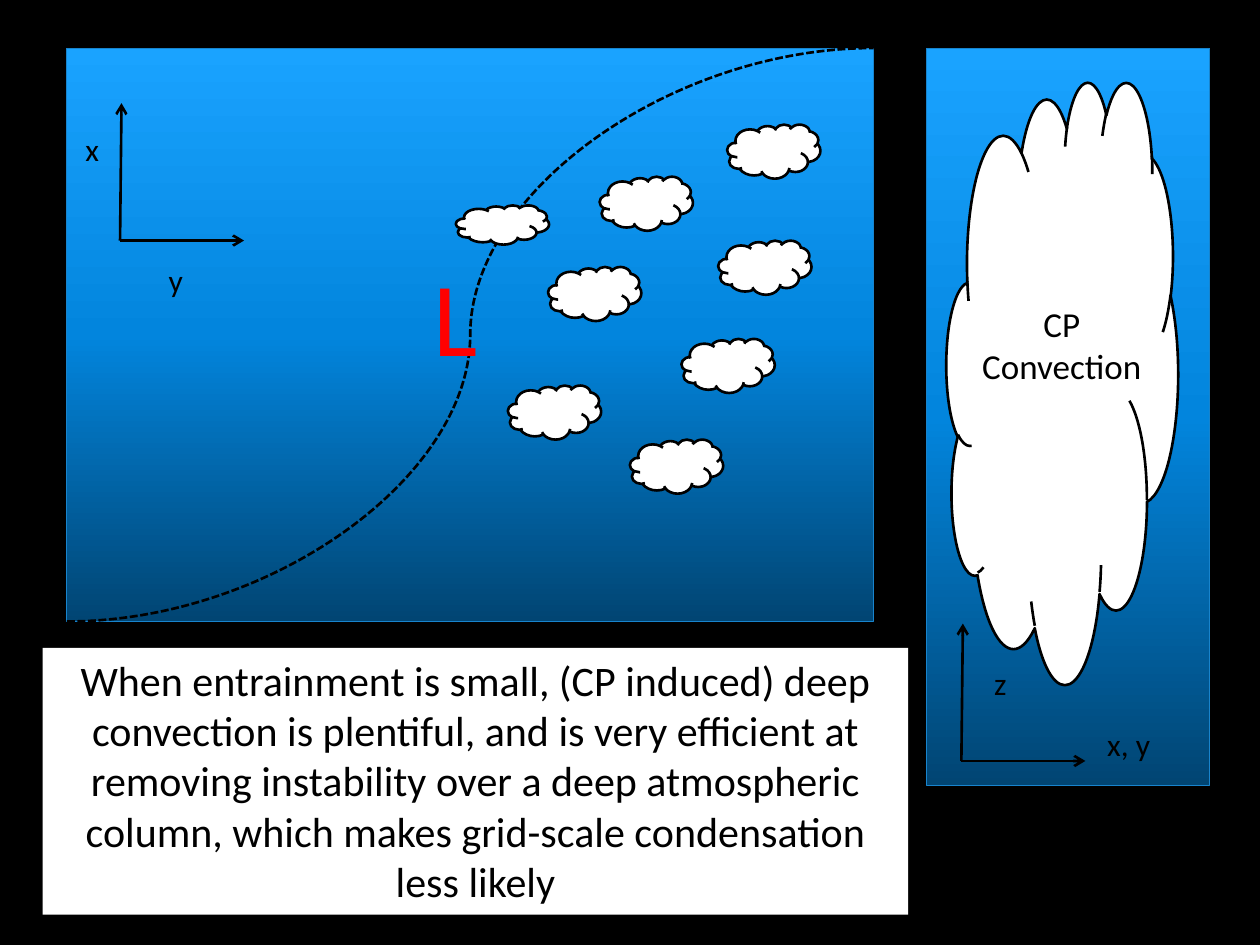
from copy import deepcopy

from lxml.etree import SubElement
from pptx import Presentation
from pptx.dml.color import RGBColor
from pptx.enum.dml import MSO_LINE
from pptx.enum.shapes import MSO_CONNECTOR, MSO_SHAPE
from pptx.enum.text import PP_ALIGN
from pptx.oxml.ns import qn
from pptx.util import Cm, Pt

THEME = {
    "font": "Calibri",
    "black": RGBColor(0x00, 0x00, 0x00),
    "white": RGBColor(0xFF, 0xFF, 0xFF),
    "red": RGBColor(0xFF, 0x00, 0x00),
    "border": RGBColor(0x18, 0x84, 0xCD),
    "sky": [(0, "014573"), (0.5, "0285DD"), (1, "1AA3FF")],
    "low": 60, "caption": 24, "cloud": 20, "axis": 18,
    "stroke": 1.5, "hairline": 0.5,
}

# All lengths are centimetres: left, top, width, height
MAP_PANEL = (1.35, 0.97, 16.26, 11.56)
SECTION_PANEL = (18.67, 0.97, 5.72, 14.86)

SHALLOW_SIZE = (1.88, 1.09)
SHALLOW_CLOUDS = [
    (12.09, 3.56), (11.05, 5.38), (10.24, 7.77), (13.74, 6.83),
    (14.66, 2.51), (12.7, 8.86), (14.48, 4.85),
]
FLAT_CLOUD = (9.19, 4.14, 1.88, 0.79)
DEEP_CLOUD = (19.08, 1.63, 4.67, 12.14)

AXIS_ORIGINS = [(2.42, 4.85), (19.38, 15.34)]
AXIS_RISE, AXIS_RUN = 2.77, 2.5

CAPTION_AREA = (0.86, 13.06, 17.45, 5.38)
CAPTION = (
    "When entrainment is small, (CP induced) deep convection is plentiful, "
    "and is very efficient at removing instability over a deep atmospheric "
    "column, which makes grid-scale condensation less likely"
)
LABELS = [
    ("L", (8.48, 4.95, 2.57, 2.82), "low", "red", PP_ALIGN.LEFT),
    ("x", (1.47, 2.49, 0.94, 1.02), "axis", "black", PP_ALIGN.LEFT),
    ("y", (3.15, 5.13, 0.94, 1.02), "axis", "black", PP_ALIGN.LEFT),
    ("z", (19.79, 13.26, 0.94, 1.02), "axis", "black", PP_ALIGN.LEFT),
    ("x, y", (22.07, 14.5, 1.68, 1.02), "axis", "black", PP_ALIGN.LEFT),
    ("CP Convection", (19.41, 5.97, 3.99, 1.96), "cloud", "black", PP_ALIGN.CENTER),
    (CAPTION, CAPTION_AREA, "caption", "black", PP_ALIGN.CENTER),
]


def add_plain_shape(page, kind, area, fill=None, line=None, width="stroke"):
    shape = page.shapes.add_shape(kind, *map(Cm, area))
    shape.shadow.inherit = False
    if fill:
        shape.fill.solid()
        shape.fill.fore_color.rgb = THEME[fill]
    if line:
        shape.line.color.rgb = THEME[line]
        shape.line.width = Pt(THEME[width])
    else:
        shape.line.fill.background()
    return shape


def add_sky(page, area):
    """Add a panel that shades from dark at the bottom to light at the top."""
    panel = add_plain_shape(page, MSO_SHAPE.RECTANGLE, area, line="border", width="hairline")
    panel.fill.gradient()
    panel.fill.gradient_angle = 90
    stop_list = panel._element.spPr.find(".//" + qn("a:gsLst"))
    stop_list.append(deepcopy(stop_list[0]))
    for stop, (position, color) in zip(panel.fill.gradient_stops, THEME["sky"]):
        stop.position = position
        stop.color.rgb = RGBColor.from_string(color)


def add_line(page, kind, start, end):
    line = page.shapes.add_connector(kind, *map(Cm, (*start, *end)))
    line.line.color.rgb = THEME["black"]
    line.line.width = Pt(THEME["stroke"])
    SubElement(line._element.spPr, qn("a:effectLst"))
    return line


def add_axes(page, origin):
    x, y = origin
    for tip in ((x + 0.03, y - AXIS_RISE), (x + AXIS_RUN, y)):
        arrow = add_line(page, MSO_CONNECTOR.STRAIGHT, origin, tip)
        SubElement(arrow.line._get_or_add_ln(), qn("a:tailEnd"), type="arrow")


def add_label(page, text, area, size, color, alignment):
    box = page.shapes.add_textbox(*map(Cm, area))
    box.text_frame.word_wrap = True
    box.text_frame.text = text
    paragraph = box.text_frame.paragraphs[0]
    paragraph.alignment = alignment
    font = paragraph.runs[0].font
    font.name = THEME["font"]
    font.size = Pt(THEME[size])
    font.color.rgb = THEME[color]


def main():
    deck = Presentation()
    deck.slide_width, deck.slide_height = Cm(25.4), Cm(19.05)
    page = deck.slides.add_slide(deck.slide_layouts[6])
    page.background.fill.solid()
    page.background.fill.fore_color.rgb = THEME["black"]

    add_sky(page, MAP_PANEL)
    add_sky(page, SECTION_PANEL)

    left, top, width, height = MAP_PANEL
    front = add_line(page, MSO_CONNECTOR.CURVE, (left, top + height), (left + width, top))
    front.line.dash_style = MSO_LINE.SQUARE_DOT

    shallow = [(*corner, *SHALLOW_SIZE) for corner in SHALLOW_CLOUDS]
    for area in (*shallow, FLAT_CLOUD, DEEP_CLOUD):
        add_plain_shape(page, MSO_SHAPE.CLOUD, area, "white", "black")

    for origin in AXIS_ORIGINS:
        add_axes(page, origin)

    add_plain_shape(page, MSO_SHAPE.RECTANGLE, CAPTION_AREA, "white")
    for label in LABELS:
        add_label(page, *label)

    deck.save("out.pptx")


if __name__ == "__main__":
    main()
